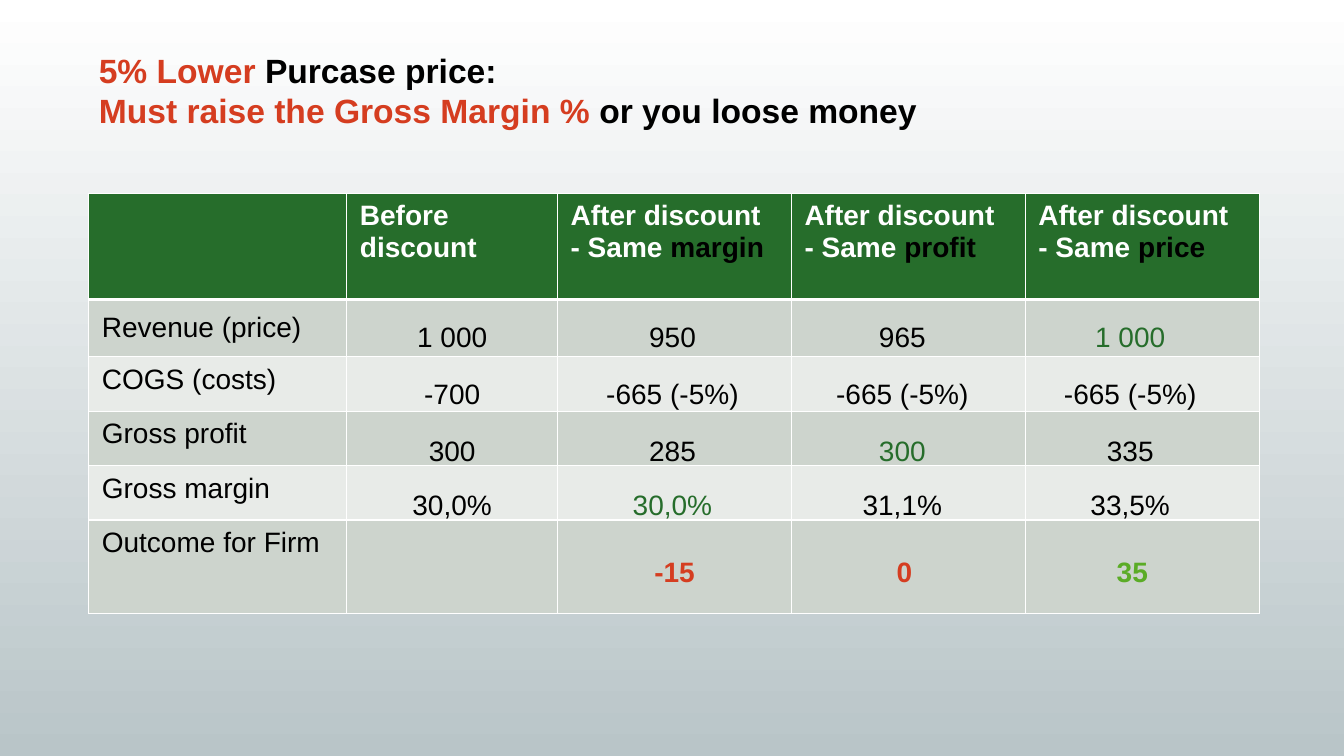
import pptx
import pptx.dml.color
import pptx.enum.text
import pptx.oxml
import pptx.oxml.ns
import pptx.util
from itertools import accumulate

Inches = pptx.util.Inches
Pt = pptx.util.Pt
RGBColor = pptx.dml.color.RGBColor
MSO_ANCHOR = pptx.enum.text.MSO_ANCHOR
PP_ALIGN = pptx.enum.text.PP_ALIGN

FONT = "Arial"
BLACK = RGBColor(0x00, 0x00, 0x00)
WHITE = RGBColor(0xFF, 0xFF, 0xFF)
RED = RGBColor(0xD5, 0x3D, 0x20)
GREEN = RGBColor(0x26, 0x6D, 0x2B)
LIME = RGBColor(0x5B, 0xAC, 0x26)
DARK_BAND = RGBColor(0xCD, 0xD4, 0xCD)
LIGHT_BAND = RGBColor(0xE8, 0xEB, 0xE8)
MIST = RGBColor(0xB9, 0xC5, 0xC8)

# Grid in inches
TITLE_BOX = (0.88, 0.44, 12.02, 0.91)
TABLE_LEFT, TABLE_TOP = 0.88, 1.92
COLUMN_WIDTHS = [2.56, 2.09, 2.32, 2.32, 2.32]
ROW_HEIGHTS = [1.05, 0.57, 0.54, 0.54, 0.54, 0.93]
VALUE_TOPS = [3.12, 3.69, 4.25, 4.79, 5.45]
VALUE_COLUMNS = [(3.43, 2.11), (5.53, 2.28), (7.81, 2.28), (10.07, 2.28)]
VALUE_HEIGHT = 0.44

TITLE_LINES = [
    [("5% Lower ", RED), ("Purcase price:", BLACK)],
    [("Must raise the Gross Margin % ", RED), ("or you loose money", BLACK)],
]
HEADERS = [
    [],
    [[("Before discount", WHITE)]],
] + [
    [[("After discount", WHITE)], [("- Same ", WHITE), (kept, BLACK)]]
    for kept in ("margin", "profit", "price")
]
ROW_LABELS = ["Revenue (price)", "COGS (costs)", "Gross profit", "Gross margin",
              "Outcome for Firm"]
VALUES = [
    ["1 000", "950", "965", "1 000"],
    ["-700", "-665 (-5%)", "-665 (-5%)", "-665 (-5%)"],
    ["300", "285", "300", "335"],
    ["30,0%", "30,0%", "31,1%", "33,5%"],
    ["", "-15", "0", "35"],
]
# Figures held constant are green, outcomes follow their sign
VALUE_COLORS = {(0, 3): GREEN, (2, 2): GREEN, (3, 1): GREEN,
                (4, 1): RED, (4, 2): RED, (4, 3): LIME}


def format_font(font, size, bold=False):
    font.name, font.size, font.bold = FONT, Pt(size), bold


def add_runs(paragraph, runs):
    for text, color in runs:
        run = paragraph.add_run()
        run.text = text
        run.font.color.rgb = color


def paint_background(slide):
    fill = slide.background.fill
    fill.gradient()
    fill.gradient_angle = 90
    for stop, color in zip(fill.gradient_stops, (MIST, WHITE)):
        stop.color.rgb = color


def place_title(slide, box):
    title = slide.shapes.title
    title.left, title.top, title.width, title.height = map(Inches, box)
    frame = title.text_frame
    frame.word_wrap = True
    frame.vertical_anchor = MSO_ANCHOR.MIDDLE
    paragraph = frame.paragraphs[0]
    paragraph.alignment = PP_ALIGN.LEFT
    format_font(paragraph.font, 24, True)
    for index, runs in enumerate(TITLE_LINES):
        if index:
            paragraph.add_line_break()
        add_runs(paragraph, runs)


def style_cell(cell, color, bottom_width):
    cell.margin_left = cell.margin_right = Inches(0.13)
    cell.margin_top = cell.margin_bottom = Inches(0.07)
    cell.fill.solid()
    cell.fill.fore_color.rgb = color
    properties = cell._tc.get_or_add_tcPr()
    for index, side in enumerate("LRTB"):
        width = Pt(bottom_width if side == "B" else 1)
        properties.insert(index, pptx.oxml.parse_xml(
            f'<a:ln{side} {pptx.oxml.ns.nsdecls("a")} w="{width}"><a:solidFill>'
            f'<a:srgbClr val="{WHITE}"/></a:solidFill></a:ln{side}>'))


def fill_cell(cell, paragraphs, bold):
    frame = cell.text_frame
    for index, runs in enumerate(paragraphs):
        paragraph = frame.add_paragraph() if index else frame.paragraphs[0]
        format_font(paragraph.font, 20, bold)
        add_runs(paragraph, runs)


def place_table(slide, left, top):
    table = slide.shapes.add_table(
        len(ROW_HEIGHTS), len(COLUMN_WIDTHS), Inches(left), Inches(top),
        Inches(sum(COLUMN_WIDTHS)), Inches(sum(ROW_HEIGHTS))).table
    table.horz_banding = False
    for column, width in zip(table.columns, COLUMN_WIDTHS):
        column.width = Inches(width)
    for index, (row, height) in enumerate(zip(table.rows, ROW_HEIGHTS)):
        row.height = Inches(height)
        band = DARK_BAND if index % 2 else LIGHT_BAND
        for cell in row.cells:
            style_cell(cell, band if index else GREEN, 1 if index else 3)

    # Header row and label column
    for index, paragraphs in enumerate(HEADERS):
        fill_cell(table.cell(0, index), paragraphs, True)
    for index, label in enumerate(ROW_LABELS, start=1):
        fill_cell(table.cell(index, 0), [[(label, BLACK)]], False)
    table.cell(1, 0).vertical_anchor = MSO_ANCHOR.MIDDLE


def place_value(slide, text, box, color, bold):
    frame = slide.shapes.add_textbox(*map(Inches, box)).text_frame
    frame.word_wrap = True
    paragraph = frame.paragraphs[0]
    paragraph.alignment = PP_ALIGN.CENTER
    format_font(paragraph.font, 20, bold)
    add_runs(paragraph, [(text, color)])


def place_values(slide):
    outcome_row = len(VALUES) - 1
    for row, (texts, top) in enumerate(zip(VALUES, VALUE_TOPS)):
        for column, (text, (left, width)) in enumerate(zip(texts, VALUE_COLUMNS)):
            if text:
                outcome = row == outcome_row
                shift = 0.02 if outcome else 0
                place_value(slide, text, (left + shift, top, width, VALUE_HEIGHT),
                            VALUE_COLORS.get((row, column), BLACK), outcome)


def main():
    presentation = pptx.Presentation()
    presentation.slide_width = Inches(13.33)
    presentation.slide_height = Inches(7.5)
    slide = presentation.slides.add_slide(presentation.slide_layouts[5])
    paint_background(slide)
    place_title(slide, TITLE_BOX)
    place_table(slide, TABLE_LEFT, TABLE_TOP)
    place_values(slide)
    presentation.save("out.pptx")


if __name__ == "__main__":
    main()
